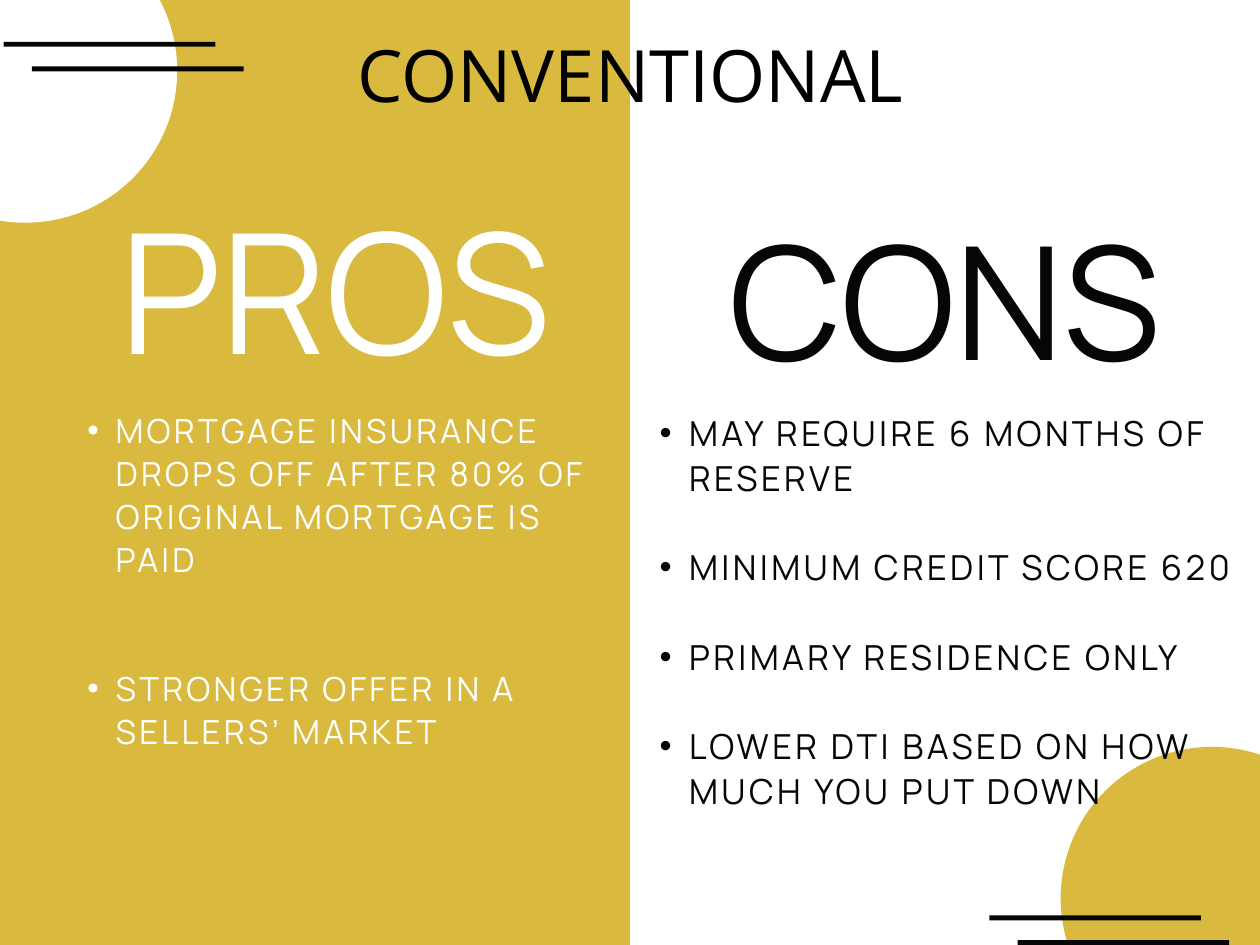
from dataclasses import dataclass

from lxml import etree
from pptx import Presentation
from pptx.dml.color import RGBColor
from pptx.enum.shapes import MSO_SHAPE
from pptx.enum.text import MSO_ANCHOR, MSO_AUTO_SIZE, PP_ALIGN
from pptx.oxml.ns import qn
from pptx.util import Pt

RECT, OVAL = MSO_SHAPE.RECTANGLE, MSO_SHAPE.OVAL
TOP, NO_FIT = MSO_ANCHOR.TOP, MSO_AUTO_SIZE.NONE
LEFT, CENTER = PP_ALIGN.LEFT, PP_ALIGN.CENTER
PX = 9525
COMPARISON = 4


@dataclass(frozen=True)
class TextStyle:
    font: str
    size: float
    leading: float
    color: str
    tracking: float = 0
    hanging: int = 0
    gap: float = 0


@dataclass(frozen=True)
class Theme:
    gold: str = "D9B93E"
    white: str = "FFFFFF"
    ink: str = "050707"
    title = TextStyle("Open Sans", 44, 61.6, "000000")
    pros_head = TextStyle("Manrope", 101.9, 112.1, white)
    cons_head = TextStyle("Manrope", 96, 105.6, ink)
    pros_list = TextStyle("Manrope", 20.2, 26.2, white, 2, 23, 52.4)
    cons_list = TextStyle("Manrope", 21, 27.3, ink, 2.1, 24, 27.3)


class Deck:
    def __init__(self, theme, width, height):
        self.theme = theme
        self.prs = Presentation()
        self.prs.slide_width, self.prs.slide_height = width * PX, height * PX
        self.s = self.prs.slides.add_slide(self.prs.slide_layouts[COMPARISON])

    def shape(self, kind, x, y, w, h, color):
        sp = self.s.shapes.add_shape(kind, x * PX, y * PX, w * PX, h * PX)
        sp.shadow.inherit = False
        sp.fill.solid()
        sp.fill.fore_color.rgb = RGBColor.from_string(color)
        sp.line.fill.background()

    def bars(self, x, y):
        for dx, dy in ((0, 0), (23, 20)):
            self.shape(RECT, x + dx, y + dy, 172, 4, self.theme.ink)

    def frame(self, idx, x, y, w, h):
        sp = self.s.placeholders[idx]
        sp.left, sp.top, sp.width, sp.height = x * PX, y * PX, w * PX, h * PX
        sp.element.getparent().append(sp.element)
        tf = sp.text_frame
        tf.word_wrap, tf.auto_size, tf.vertical_anchor = True, NO_FIT, TOP
        tf.margin_left = tf.margin_top = tf.margin_right = tf.margin_bottom = 0
        return tf

    def paragraph(self, p, text, style, align):
        p.alignment = align
        p.line_spacing = Pt(style.leading)
        p.space_before = p.space_after = Pt(0)
        r = p.add_run()
        r.text = text
        r.font.name, r.font.size, r.font.bold = style.font, Pt(style.size), False
        r.font.color.rgb = RGBColor.from_string(style.color)
        if style.tracking:
            r.font._element.set("spc", str(round(style.tracking * 100)))

    def heading(self, idx, box, text, style):
        tf = self.frame(idx, *box)
        self.paragraph(tf.paragraphs[0], text, style, CENTER)

    def bullets(self, idx, box, items, style):
        tf = self.frame(idx, *box)
        for i, item in enumerate(items):
            p = tf.add_paragraph() if i else tf.paragraphs[0]
            self.paragraph(p, item, style, LEFT)
            if i:
                p.space_before = Pt(style.gap)
            pPr = p._p.get_or_add_pPr()
            pPr.set("marL", str(2 * style.hanging * PX))
            pPr.set("indent", str(-style.hanging * PX))
            etree.SubElement(pPr, qn("a:buFont")).set("typeface", "Arial")
            etree.SubElement(pPr, qn("a:buChar")).set("char", "•")


def main():
    t = Theme()
    d = Deck(t, 1024, 768)

    d.shape(RECT, 0, 0, 512, 768, t.gold)
    d.shape(OVAL, 862, 607, 246, 246, t.gold)
    d.bars(804, 744)
    d.shape(OVAL, -103, -66, 247, 247, t.white)
    d.bars(3, 34)

    d.heading(1, (48, 166, 449, 156), "PROS", t.pros_head)
    d.bullets(2, (48, 331, 449, 311), [
        "MORTGAGE INSURANCE DROPS OFF AFTER 80% OF ORIGINAL MORTGAGE IS PAID",
        "STRONGER OFFER IN A SELLERS’ MARKET",
    ], t.pros_list)
    d.heading(3, (512, 178, 512, 146), "CONS", t.cons_head)
    d.bullets(4, (512, 332, 512, 323), [
        "MAY REQUIRE 6 MONTHS OF RESERVE",
        "MINIMUM CREDIT SCORE 620",
        "PRIMARY RESIDENCE ONLY",
        "LOWER DTI BASED ON HOW MUCH YOU PUT DOWN",
    ], t.cons_list)
    d.heading(0, (290, 13, 445, 79), "CONVENTIONAL", t.title)

    d.prs.save("out.pptx")


if __name__ == "__main__":
    main()
